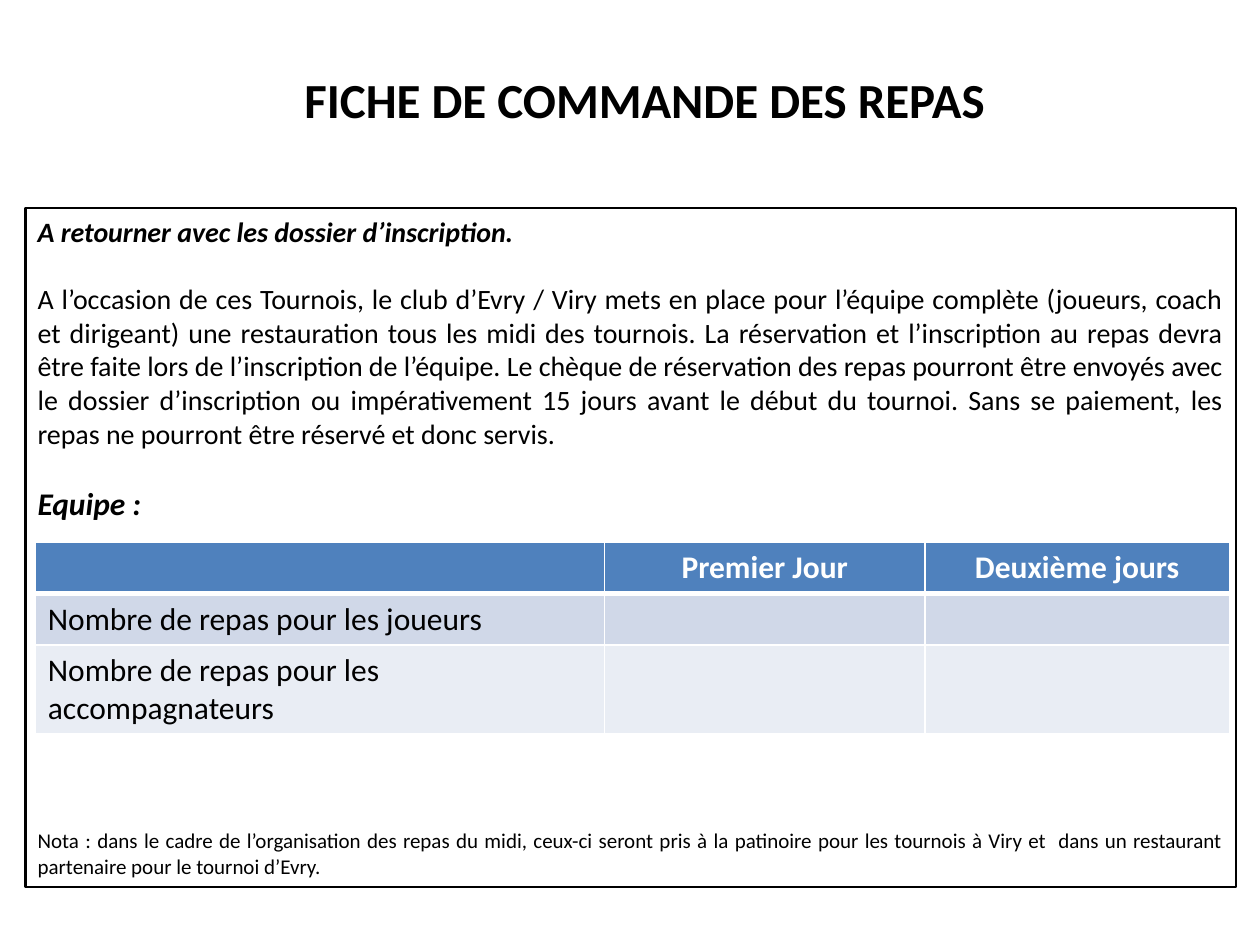
from dataclasses import dataclass

from lxml import etree
from pptx import Presentation
from pptx import util as u
from pptx.dml.color import RGBColor
from pptx.enum import shapes, text
from pptx.oxml import ns


@dataclass(frozen=True)
class Theme:
    """Colours, font and type sizes of the order form."""
    font: str = "Calibri"
    black: str = "000000"
    white: str = "FFFFFF"
    header: str = "4F81BD"
    bands: tuple = ("D0D8E8", "E9EDF4")
    title: int = 28
    body: int = 16
    label: int = 18
    note: int = 12


THEME = Theme()
INTRODUCTION = (
    "A l’occasion de ces Tournois, le club d’Evry / Viry mets en place pour l’équipe complète "
    "(joueurs, coach et dirigeant) une restauration tous les midi des tournois. La réservation "
    "et l’inscription au repas devra être faite lors de l’inscription de l’équipe. Le chèque de "
    "réservation des repas pourront être envoyés avec le dossier d’inscription ou impérativement "
    "15 jours avant le début du tournoi. Sans se paiement, les repas ne pourront être réservé et "
    "donc servis."
)
NOTE = (
    "Nota : dans le cadre de l’organisation des repas du midi, ceux-ci seront pris à la patinoire "
    "pour les tournois à Viry et  dans un restaurant partenaire pour le tournoi d’Evry."
)
FORM_PARAGRAPHS = (
    ("A retourner avec les dossier d’inscription.", THEME.body, True, 0),
    (INTRODUCTION, THEME.body, False, 19.5),
    ("Equipe :", THEME.label, True, 19.5),
    (NOTE, THEME.note, False, 175),
)
MEAL_ROWS = (
    ("", "Premier Jour", "Deuxième jours"),
    ("Nombre de repas pour les joueurs", "", ""),
    ("Nombre de repas pour les accompagnateurs", "", ""),
)
COLUMN_WIDTHS = (4.52, 2.54, 2.42)
ROW_HEIGHTS = (0.41, 0.41, 0.69)


def add_run(paragraph, content, size, colour=THEME.black, bold=False, italic=False):
    """Append one styled run to a paragraph."""
    run = paragraph.add_run()
    run.text = content
    run.font.name = THEME.font
    run.font.size = u.Pt(size)
    run.font.bold = bold
    run.font.italic = italic
    run.font.color.rgb = RGBColor.from_string(colour)


def add_title(slide):
    """Add the centred form title."""
    box = slide.shapes.add_textbox(u.Inches(1.69), u.Inches(0.5), u.Inches(6.85), u.Inches(0.57))
    box.text_frame.word_wrap = True
    paragraph = box.text_frame.paragraphs[0]
    paragraph.alignment = text.PP_ALIGN.CENTER
    add_run(paragraph, "FICHE DE COMMANDE DES REPAS", THEME.title, bold=True)


def add_form_frame(slide):
    """Add the outlined frame with the form's justified text."""
    frame = slide.shapes.add_shape(
        shapes.MSO_SHAPE.RECTANGLE, u.Inches(0.2), u.Inches(1.65), u.Inches(9.61), u.Inches(5.39)
    )
    frame.shadow.inherit = False
    frame.fill.background()
    frame.line.color.rgb = RGBColor.from_string(THEME.black)
    frame.line.width = u.Pt(1.5)
    text_frame = frame.text_frame
    text_frame.word_wrap = True
    text_frame.vertical_anchor = text.MSO_ANCHOR.TOP
    for index, (content, size, strong, gap) in enumerate(FORM_PARAGRAPHS):
        paragraph = text_frame.add_paragraph() if index else text_frame.paragraphs[0]
        paragraph.alignment = text.PP_ALIGN.JUSTIFY
        paragraph.space_before = u.Pt(gap)
        add_run(paragraph, content, size, bold=strong, italic=strong)


def set_borders(cell, top, bottom):
    """Give a cell white borders, with widths in points for top and bottom."""
    properties = cell._tc.get_or_add_tcPr()
    for side, width in (("L", 1), ("R", 1), ("T", top), ("B", bottom)):
        line = etree.SubElement(properties, ns.qn(f"a:ln{side}"), w=str(u.Pt(width)))
        fill = etree.SubElement(line, ns.qn("a:solidFill"))
        etree.SubElement(fill, ns.qn("a:srgbClr"), val=THEME.white)


def style_cell(cell, content, row):
    """Fill one meal table cell and write its text."""
    is_header = row == 0
    set_borders(cell, top=3 if row == 1 else 1, bottom=3 if is_header else 1)
    cell.fill.solid()
    colour = THEME.header if is_header else THEME.bands[(row - 1) % 2]
    cell.fill.fore_color.rgb = RGBColor.from_string(colour)
    cell.vertical_anchor = text.MSO_ANCHOR.MIDDLE
    if content:
        paragraph = cell.text_frame.paragraphs[0]
        paragraph.alignment = text.PP_ALIGN.CENTER if is_header else text.PP_ALIGN.LEFT
        add_run(paragraph, content, THEME.label, THEME.white if is_header else THEME.black, is_header)


def add_meal_table(slide):
    """Add the table of meals by day."""
    table = slide.shapes.add_table(
        len(ROW_HEIGHTS), len(COLUMN_WIDTHS), u.Inches(0.28), u.Inches(4.3),
        u.Inches(sum(COLUMN_WIDTHS)), u.Inches(sum(ROW_HEIGHTS)),
    ).table
    for column, width in zip(table.columns, COLUMN_WIDTHS):
        column.width = u.Inches(width)
    for row, height in zip(table.rows, ROW_HEIGHTS):
        row.height = u.Inches(height)
    for row_index, contents in enumerate(MEAL_ROWS):
        for column_index, content in enumerate(contents):
            style_cell(table.cell(row_index, column_index), content, row_index)


def main():
    """Build and save the meal order form."""
    presentation = Presentation()
    presentation.slide_width = u.Inches(10)
    presentation.slide_height = u.Inches(7.5)
    slide = presentation.slides.add_slide(presentation.slide_layouts[6])
    add_title(slide)
    add_form_frame(slide)
    add_meal_table(slide)
    presentation.save("out.pptx")


if __name__ == "__main__":
    main()
